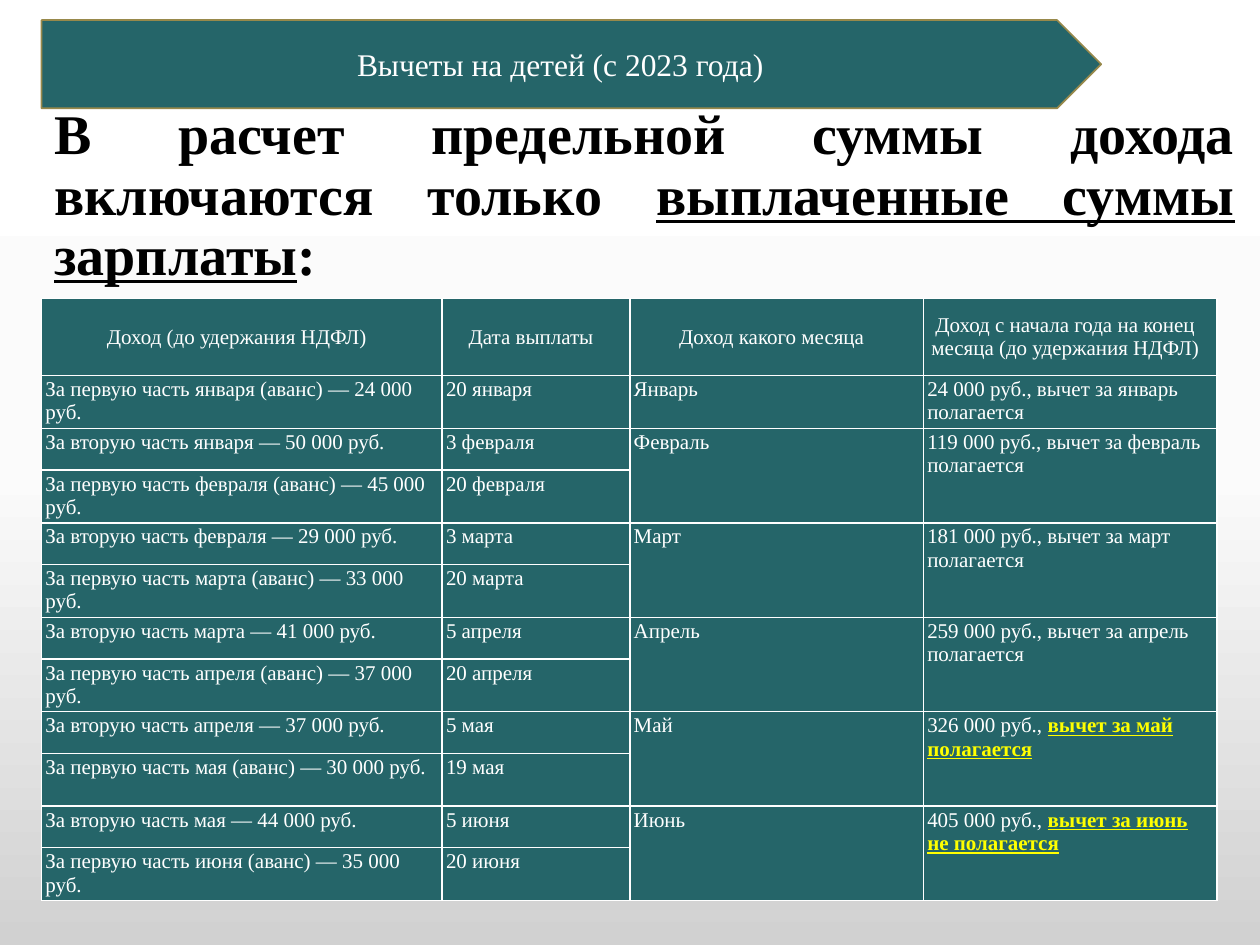
from copy import deepcopy

from pptx import Presentation
from pptx.dml.color import RGBColor
from pptx.enum.shapes import MSO_SHAPE as Preset
from pptx.enum.text import MSO_ANCHOR as Anchor, MSO_AUTO_SIZE as AutoSize, PP_ALIGN as Align
from pptx.oxml import parse_xml
from pptx.oxml.ns import nsdecls
from pptx.util import Inches, Pt

TEAL, WHITE, BLACK, YELLOW, GOLD = "256569", "FFFFFF", "000000", "FFFF00", "98894B"
BACKGROUND_STOPS = [(0, "FFFFFF"), (0.5, "FBFBFB"), (1, "D1D1D1")]
COLUMN_WIDTHS = [3.18, 1.49, 2.33, 2.33]
HEADER_HEIGHT, SECOND_PART_HEIGHT, FIRST_PART_HEIGHT = 0.61, 0.33, 0.42
CELL_FORMAT = {
    "margin_left": Inches(0.03), "margin_right": Inches(0.11),
    "margin_top": Inches(0.02), "margin_bottom": Inches(0.02),
}
HIGHLIGHT = {"color": YELLOW, "bold": True, "underline": True}

HEADERS = ["Доход (до удержания НДФЛ)", "Дата выплаты", "Доход какого месяца",
           "Доход с начала года на конец месяца (до удержания НДФЛ)"]
MONTHS = [
    ("Январь", [("За первую часть января (аванс) — 24 000 руб.", "20 января")],
     [("24 000 руб., вычет за январь полагается", {})]),
    ("Февраль", [("За вторую часть января — 50 000 руб.", "3 февраля"),
                 ("За первую часть февраля (аванс) — 45 000 руб.", "20 февраля")],
     [("119 000 руб., вычет за февраль полагается", {})]),
    ("Март", [("За вторую часть февраля — 29 000 руб.", "3 марта"),
              ("За первую часть марта (аванс) — 33 000 руб.", "20 марта")],
     [("181 000 руб., вычет за март полагается", {})]),
    ("Апрель", [("За вторую часть марта — 41 000 руб.", "5 апреля"),
                ("За первую часть апреля (аванс) — 37 000 руб.", "20 апреля")],
     [("259 000 руб., вычет за апрель полагается", {})]),
    ("Май", [("За вторую часть апреля — 37 000 руб.", "5 мая"),
             ("За первую часть мая (аванс) — 30 000 руб.", "19 мая")],
     [("326 000 руб., ", {}), ("вычет за май полагается", HIGHLIGHT)]),
    ("Июнь", [("За вторую часть мая — 44 000 руб.", "5 июня"),
              ("За первую часть июня (аванс) — 35 000 руб.", "20 июня")],
     [("405 000 руб., ", {}), ("вычет за июнь не полагается", HIGHLIGHT)]),
]


def rgb(value):
    return RGBColor.from_string(value)


def apply_format(target, values):
    for name, value in values.items():
        setattr(target, name, value)


def write_runs(paragraph, runs, size, color, align):
    paragraph.alignment = align
    for text, changes in runs:
        run = paragraph.add_run()
        run.text = text
        values = {"name": "Times New Roman", "size": Pt(size), "bold": False, **changes}
        run.font.color.rgb = rgb(values.pop("color", color))
        apply_format(run.font, values)


def paint_background(slide):
    fill = slide.background.fill
    fill.gradient()
    fill.gradient_angle = 270
    last_stop = slide.background._cSld.xpath(".//a:gs")[-1]
    last_stop.addprevious(deepcopy(last_stop))
    for stop, (position, color) in zip(fill.gradient_stops, BACKGROUND_STOPS):
        stop.position = position
        stop.color.rgb = rgb(color)


def place_title(slide, left, top, width, height):
    title = slide.shapes.title
    apply_format(title, {"left": left, "top": top, "width": width, "height": height})
    frame = title.text_frame
    apply_format(frame, {"word_wrap": True, "auto_size": AutoSize.NONE,
                         "vertical_anchor": Anchor.MIDDLE})
    paragraph = frame.paragraphs[0]
    paragraph.line_spacing = 0.9
    write_runs(paragraph, [
        ("В расчет предельной суммы дохода включаются только ", {"bold": True}),
        ("выплаченные суммы зарплаты", {"bold": True, "underline": True}),
        (":", {"bold": True}),
    ], 32, BLACK, Align.JUSTIFY)


def place_banner(slide, left, top, width, height):
    banner = slide.shapes.add_shape(Preset.PENTAGON, left, top, width, height)
    banner.shadow.inherit = False
    banner.fill.solid()
    banner.fill.fore_color.rgb = rgb(TEAL)
    banner.line.color.rgb = rgb(GOLD)
    banner.line.width = Pt(1)
    banner.text_frame.vertical_anchor = Anchor.MIDDLE
    write_runs(banner.text_frame.paragraphs[0], [("Вычеты на детей (с 2023 года)", {})],
               18, WHITE, Align.CENTER)


def style_cell(cell):
    apply_format(cell, CELL_FORMAT)
    properties = cell._tc.get_or_add_tcPr()
    for side in ("lnL", "lnR", "lnT", "lnB"):
        properties.append(parse_xml(
            f'<a:{side} {nsdecls("a")} w="{Pt(1)}"><a:solidFill>'
            f'<a:srgbClr val="{WHITE}"/></a:solidFill></a:{side}>'))
    cell.fill.solid()
    cell.fill.fore_color.rgb = rgb(TEAL)


def write_cell(cell, runs, align=Align.LEFT):
    write_runs(cell.text_frame.paragraphs[0], runs, 12, WHITE, align)


def place_income_table(slide, left, top, width, height):
    row_count = 1 + sum(len(payments) for _, payments, _ in MONTHS)
    table = slide.shapes.add_table(row_count, len(HEADERS), left, top, width, height).table
    for column, column_width in zip(table.columns, COLUMN_WIDTHS):
        column.width = Inches(column_width)
    for cell in table.iter_cells():
        style_cell(cell)

    table.rows[0].height = Inches(HEADER_HEIGHT)
    for column, header in enumerate(HEADERS):
        cell = table.cell(0, column)
        cell.vertical_anchor = Anchor.MIDDLE
        write_cell(cell, [(header, {})], Align.CENTER)

    row = 1
    for month, payments, total in MONTHS:
        last_row = row + len(payments) - 1
        for column, runs in ((2, [(month, {})]), (3, total)):
            cell = table.cell(row, column)
            if last_row > row:
                cell.merge(table.cell(last_row, column))
            write_cell(cell, runs)
        for income, date in payments:
            row_height = FIRST_PART_HEIGHT if row == last_row else SECOND_PART_HEIGHT
            table.rows[row].height = Inches(row_height)
            write_cell(table.cell(row, 0), [(income, {})])
            write_cell(table.cell(row, 1), [(date, {})])
            row += 1


def main():
    presentation = Presentation()
    presentation.slide_width = Inches(10)
    presentation.slide_height = Inches(7.5)
    slide = presentation.slides.add_slide(presentation.slide_layouts[5])
    paint_background(slide)
    place_title(slide, Inches(0.33), Inches(1.18), Inches(9.57), Inches(0.77))
    place_banner(slide, Inches(0.33), Inches(0.16), Inches(8.41), Inches(0.7))
    place_income_table(slide, Inches(0.33), Inches(2.37), Inches(9.33), Inches(4.89))
    presentation.save("out.pptx")


if __name__ == "__main__":
    main()
